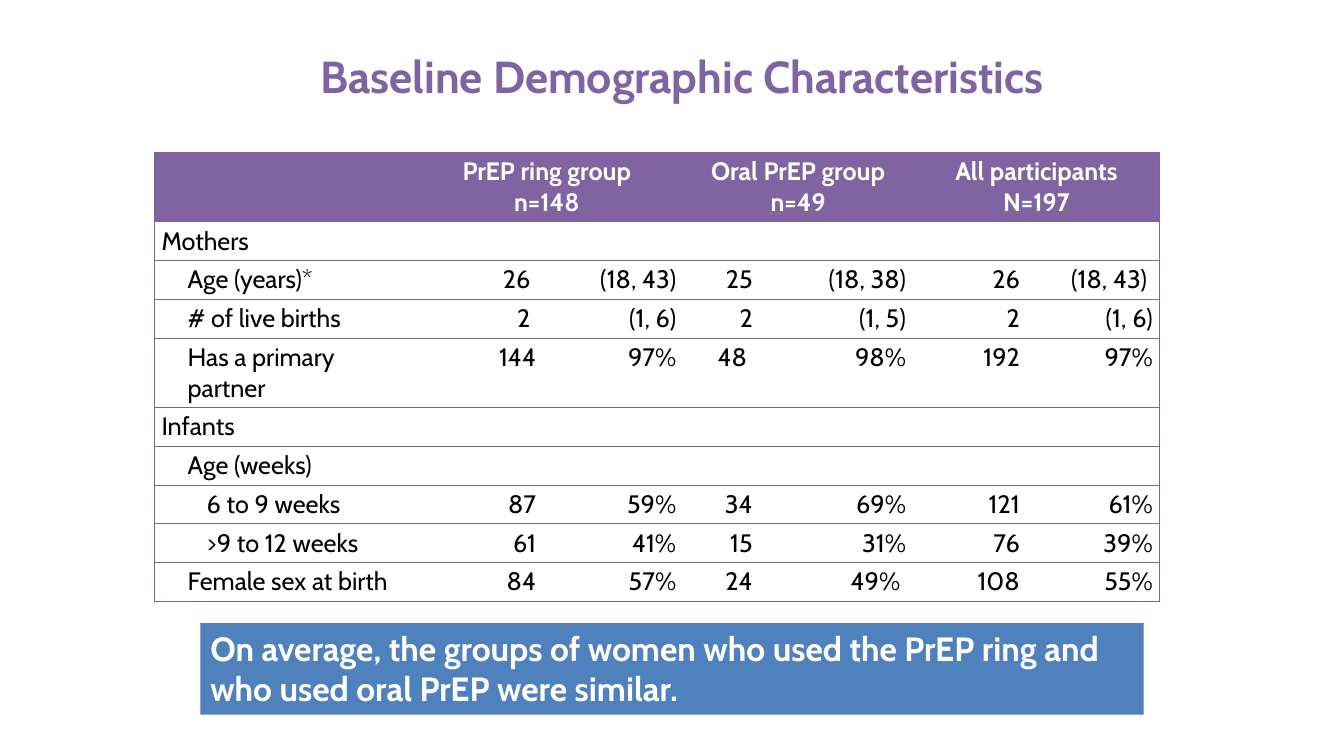
from dataclasses import dataclass

from lxml.etree import SubElement
from pptx import Presentation
from pptx.dml.color import RGBColor
from pptx.enum.shapes import MSO_SHAPE as Shape
from pptx.enum.text import MSO_ANCHOR as Anchor, MSO_AUTO_SIZE as Fit, PP_ALIGN as Align
from pptx.oxml.ns import qn
from pptx.slide import Slide
from pptx.table import Table, _Cell as Cell
from pptx.text.text import TextFrame
from pptx.util import Cm, Pt

PURPLE = RGBColor(0x80, 0x64, 0xA2)
RULE = RGBColor(0x7D, 0x60, 0xA0)
BLUE = RGBColor(0x4F, 0x81, 0xBD)
WHITE = RGBColor(0xFF, 0xFF, 0xFF)
BLACK = RGBColor(0, 0, 0)

FONT = "Cabin"
WIDTHS = (6.45, 3.35, 3.53, 1.93, 3.86, 2.87, 3.35)
HEAD_H, ROW_H = 1.5, 0.86
INDENTS = (0, 0.66, 1.14)


@dataclass(frozen=True)
class Row:
    label: str
    level: int = 1
    values: tuple[str, ...] = ()


HEADS = ("PrEP ring group\nn=148", "Oral PrEP group\nn=49", "All participants\nN=197")
ROWS = (
    Row("Mothers", 0),
    Row("Age (years)*", 1, ("26 ", "(18, 43)", "25", "(18, 38)", "26", "(18, 43) ")),
    Row("# of live births", 1, ("2 ", "(1, 6)", "2", "(1, 5)", "2", "(1, 6)")),
    Row("Has a primary partner", 1, ("144", "97%", "48 ", "98%", "192", "97%")),
    Row("Infants", 0),
    Row("Age (weeks)"),
    Row("6 to 9 weeks", 2, ("87", "59%", "34", "69%", "121", "61%")),
    Row(">9 to 12 weeks", 2, ("61", "41%", "15", "31%", "76", "39%")),
    Row("Female sex at birth", 1, ("84", "57%", "24", "49% ", "108", "55%")),
)


def write(frame: TextFrame, text: str, *, size: float = 18, color: RGBColor = BLACK,
          bold: bool = False, align: Align = Align.LEFT, indent: float = 0,
          spacing: float | None = None) -> None:
    """Fill a frame, one paragraph for each line of text."""
    for i, line in enumerate(text.split("\n")):
        para = frame.add_paragraph() if i else frame.paragraphs[0]
        para.alignment = align
        if spacing:
            para.line_spacing = spacing
        if indent:
            para._p.get_or_add_pPr().set("marL", str(Cm(indent)))
        run = para.add_run()
        run.text = line
        font = run.font
        font.name, font.size, font.bold = FONT, Pt(size), bold
        font.color.rgb = color


def add_title(slide: Slide) -> None:
    title = slide.shapes.title
    title.left, title.top = Cm(5.51), Cm(1.27)
    title.width, title.height = Cm(23.37), Cm(1.42)
    frame = title.text_frame
    frame.auto_size = Fit.NONE
    frame.vertical_anchor = Anchor.MIDDLE
    write(frame, "Baseline Demographic Characteristics", size=32, color=PURPLE,
          bold=True, align=Align.CENTER, spacing=0.9)


def edge(cell: Cell, first: bool, last: bool) -> None:
    """Rule the top and bottom, and the sides only at the table's ends."""
    props = cell._tc.get_or_add_tcPr()
    for side, shown in (("L", first), ("R", last), ("T", True), ("B", True)):
        line = SubElement(props, qn(f"a:ln{side}"), w=str(Pt(0.75)))
        if shown:
            fill = SubElement(line, qn("a:solidFill"))
            SubElement(fill, qn("a:srgbClr"), val=str(RULE))
        else:
            SubElement(line, qn("a:noFill"))


def style(table: Table) -> None:
    end = len(WIDTHS) - 1
    for r, row in enumerate(table.rows):
        row.height = Cm(ROW_H if r else HEAD_H)
        for c, cell in enumerate(row.cells):
            span = cell.span_width if cell.is_merge_origin else 1
            edge(cell, c == 0, c + span - 1 == end)
            cell.margin_left = cell.margin_right = Cm(0.18)
            cell.margin_top = cell.margin_bottom = Cm(0.1)
            if r:
                cell.fill.background()
            else:
                cell.fill.solid()
                cell.fill.fore_color.rgb = PURPLE


def add_grid(slide: Slide) -> None:
    height = HEAD_H + ROW_H * len(ROWS)
    table = slide.shapes.add_table(len(ROWS) + 1, len(WIDTHS), Cm(3.89), Cm(3.84),
                                   Cm(sum(WIDTHS)), Cm(height)).table
    table.first_row = table.horz_banding = False
    for col, width in zip(table.columns, WIDTHS):
        col.width = Cm(width)

    # Group heads, each over a pair of columns
    for i, head in enumerate(HEADS):
        cell = table.cell(0, 2 * i + 1)
        cell.merge(table.cell(0, 2 * i + 2))
        write(cell.text_frame, head, color=WHITE, bold=True, align=Align.CENTER)

    # Labels and values
    for r, row in enumerate(ROWS, 1):
        label = table.cell(r, 0)
        if row.level == 0:
            label.merge(table.cell(r, len(WIDTHS) - 1))
        write(label.text_frame, row.label, indent=INDENTS[row.level])
        for c, value in enumerate(row.values, 1):
            write(table.cell(r, c).text_frame, value, align=Align.RIGHT)
    style(table)


def add_note(slide: Slide) -> None:
    box = slide.shapes.add_shape(Shape.RECTANGLE, Cm(5.05), Cm(15.7), Cm(23.77), Cm(2.31))
    box.shadow.inherit = False
    box.fill.solid()
    box.fill.fore_color.rgb = BLUE
    box.line.fill.background()
    frame = box.text_frame
    frame.word_wrap = True
    frame.auto_size = Fit.SHAPE_TO_FIT_TEXT
    frame.vertical_anchor = Anchor.TOP
    write(frame, "On average, the groups of women who used the PrEP ring and "
          "who used oral PrEP were similar.", size=24, color=WHITE, bold=True)


def main() -> None:
    deck = Presentation()
    deck.slide_width, deck.slide_height = Cm(33.87), Cm(19.05)
    slide = deck.slides.add_slide(deck.slide_layouts[5])
    add_title(slide)
    add_grid(slide)
    add_note(slide)
    deck.save("out.pptx")


if __name__ == "__main__":
    main()
